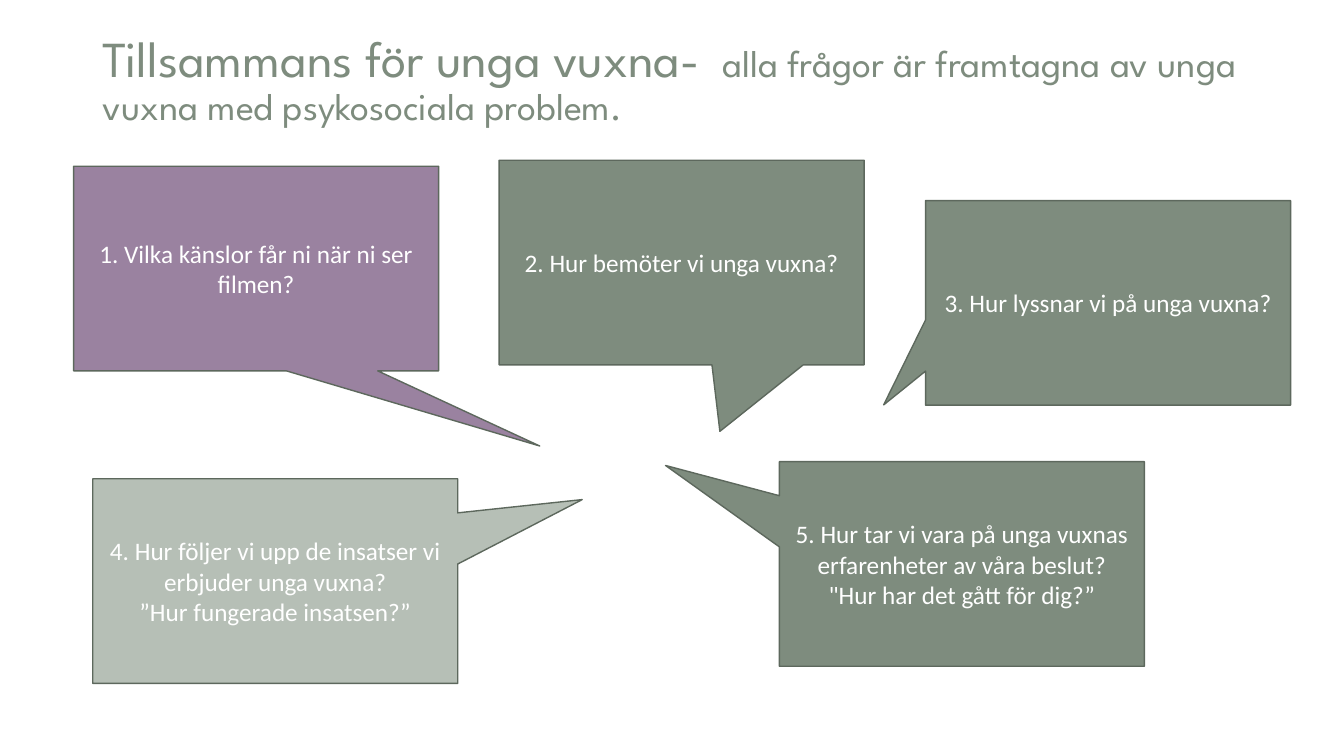
from pptx import Presentation
from pptx.dml.color import RGBColor
from pptx.enum.shapes import MSO_SHAPE
from pptx.enum.text import MSO_ANCHOR, PP_ALIGN
from pptx.util import Inches, Pt

CALLOUT = MSO_SHAPE.RECTANGULAR_CALLOUT
MIDDLE = MSO_ANCHOR.MIDDLE
CENTER = PP_ALIGN.CENTER

COLORS = {
    "green": "7E8C7E",
    "purple": "9A82A0",
    "pale": "B6BFB6",
    "outline": "5D685D",
    "white": "FFFFFF",
}

TITLE = [
    ("Tillsammans för unga vuxna- ", 36),
    (" alla frågor är framtagna av unga vuxna med psykosociala problem.", 27),
]

CALLOUT_W, CALLOUT_H = 3.62, 2.03
QUESTIONS = [
    (0.73, 1.65, "purple", (0.777, 0.867),
     ["1. Vilka känslor får ni när ni ser filmen?"]),
    (4.95, 1.59, "green", (0.105, 0.825),
     ["2. Hur bemöter vi unga vuxna?"]),
    (9.18, 1.99, "green", (-0.615, 0.499),
     ["3. Hur lyssnar vi på unga vuxna?"]),
    (0.92, 4.75, "pale", (0.841, -0.398),
     ["4. Hur följer vi upp de insatser vi erbjuder unga vuxna?",
      "”Hur fungerade insatsen?”"]),
    (7.73, 4.58, "green", (-0.812, -0.481),
     ["5. Hur tar vi vara på unga vuxnas erfarenheter av våra beslut?",
      "\"Hur har det gått för dig?”"]),
]


def rgb(name):
    return RGBColor.from_string(COLORS[name])


def set_attrs(obj, values):
    for name, value in values.items():
        setattr(obj, name, value)


def add_run(p, text, size, font, color):
    r = p.add_run()
    r.text = text
    set_attrs(r.font, {"size": Pt(size), "name": font})
    r.font.color.rgb = rgb(color)


def add_title(s, x, y, w, h):
    tf = s.shapes.add_textbox(Inches(x), Inches(y), Inches(w), Inches(h)).text_frame
    set_attrs(tf, {"word_wrap": True, "vertical_anchor": MIDDLE})
    p = tf.paragraphs[0]
    p.line_spacing = 0.9
    for text, size in TITLE:
        add_run(p, text, size, "League Spartan", "green")


def add_question(s, x, y, w, h, color, pointer, lines):
    sp = s.shapes.add_shape(CALLOUT, Inches(x), Inches(y), Inches(w), Inches(h))
    sp.shadow.inherit = False
    for i, offset in enumerate(pointer):
        sp.adjustments[i] = offset
    sp.fill.solid()
    sp.fill.fore_color.rgb = rgb(color)
    sp.line.color.rgb = rgb("outline")
    sp.line.width = Pt(1)
    tf = sp.text_frame
    set_attrs(tf, {"word_wrap": True, "vertical_anchor": MIDDLE})
    for i, text in enumerate(lines):
        p = tf.add_paragraph() if i else tf.paragraphs[0]
        p.alignment = CENTER
        add_run(p, text, 18, "Calibri", "white")


def main():
    prs = Presentation()
    set_attrs(prs, {"slide_width": Inches(13.33), "slide_height": Inches(7.5)})
    s = prs.slides.add_slide(prs.slide_layouts[6])
    add_title(s, 0.92, 0.08, 11.5, 1.45)
    for x, y, color, pointer, lines in QUESTIONS:
        add_question(s, x, y, CALLOUT_W, CALLOUT_H, color, pointer, lines)
    prs.save("out.pptx")


if __name__ == "__main__":
    main()
